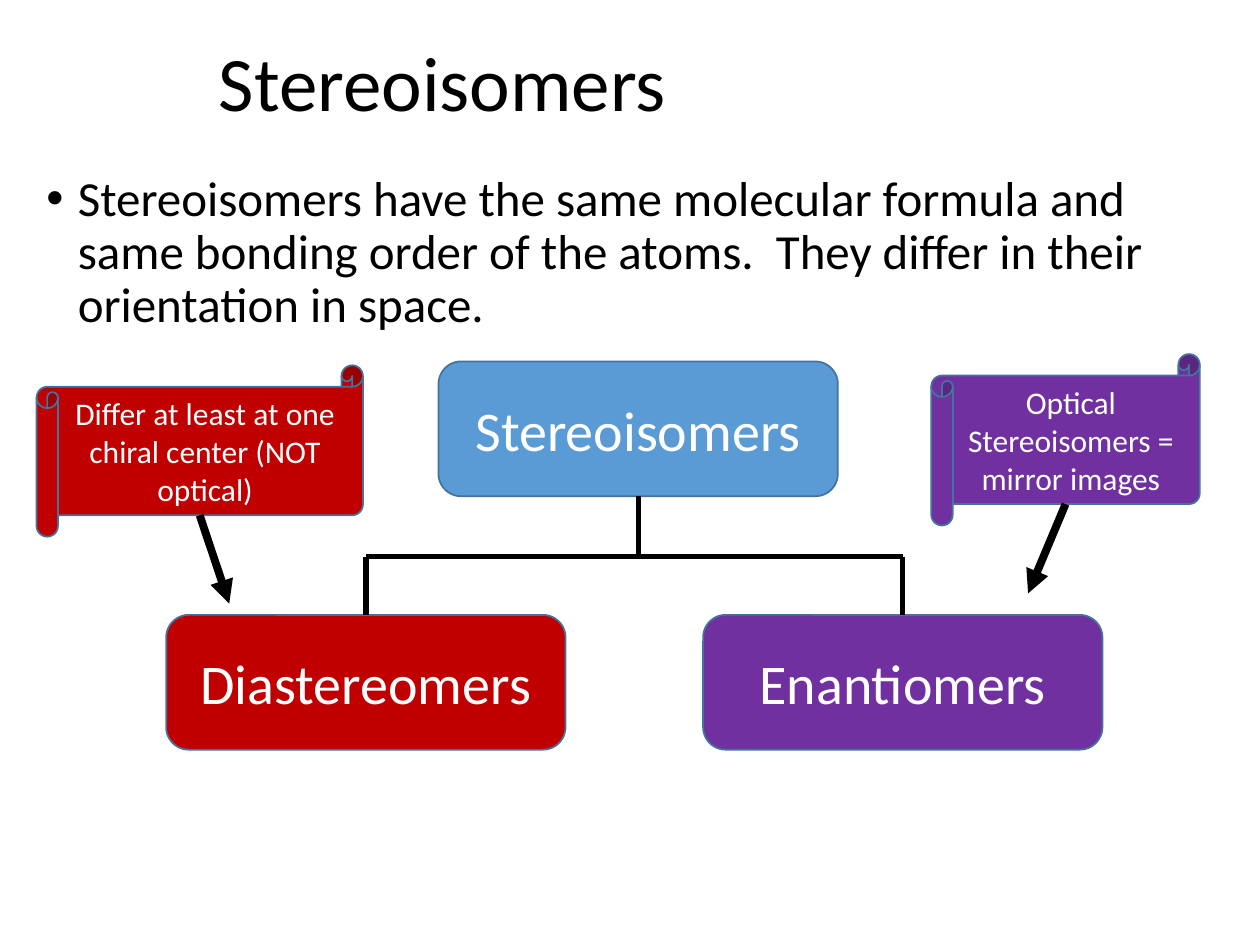
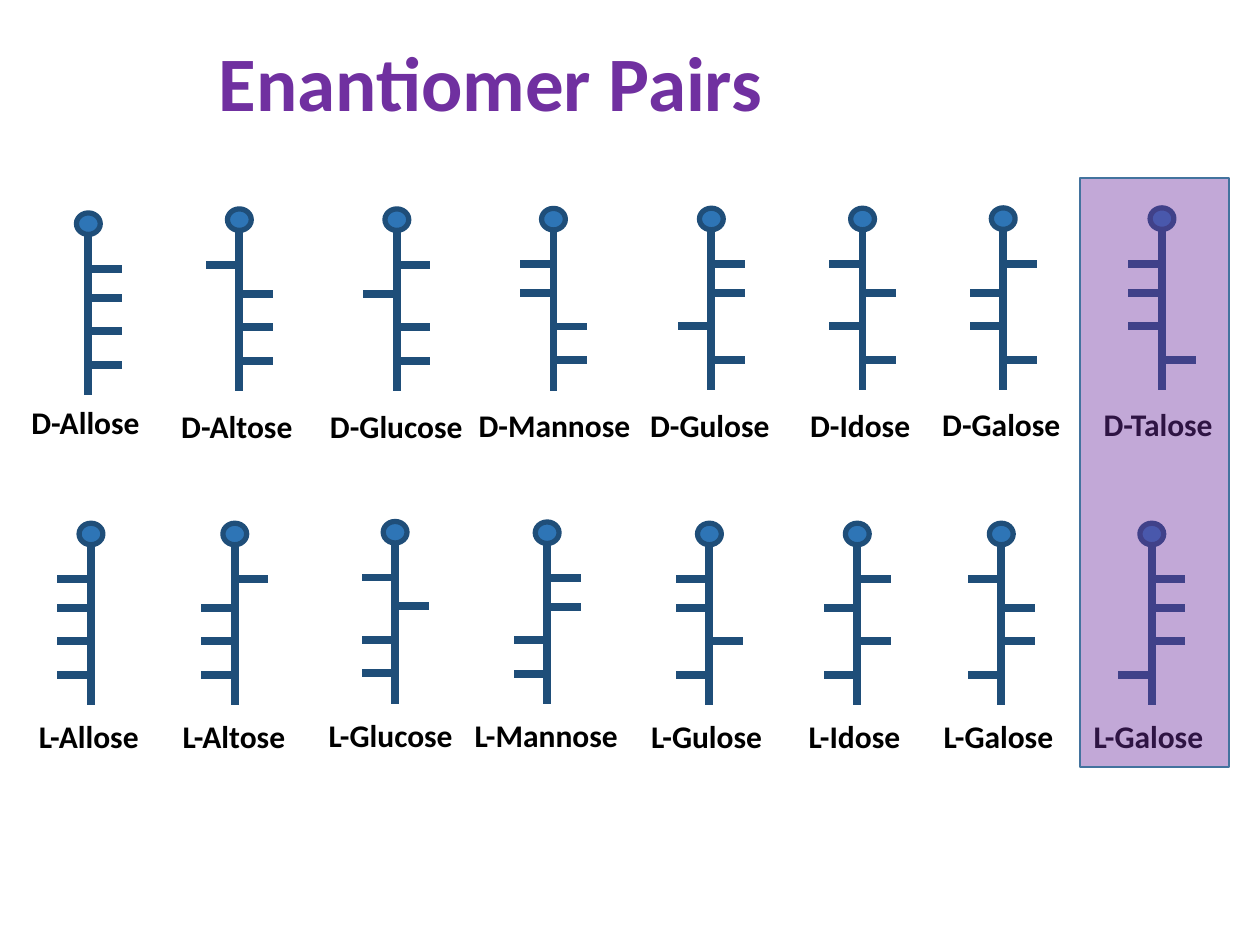
"""Builds two slides on stereoisomers and the enantiomer pairs of the aldohexoses."""
from lxml import etree
from pptx import Presentation
from pptx.dml.color import RGBColor
from pptx.enum.shapes import MSO_CONNECTOR, MSO_SHAPE
from pptx.enum.text import MSO_ANCHOR, PP_ALIGN
from pptx.oxml.ns import qn
from pptx.util import Pt

STRAIGHT = MSO_CONNECTOR.STRAIGHT
ROUNDED, SCROLL = MSO_SHAPE.ROUNDED_RECTANGLE, MSO_SHAPE.HORIZONTAL_SCROLL
OVAL, RECTANGLE = MSO_SHAPE.OVAL, MSO_SHAPE.RECTANGLE
TOP, MIDDLE = MSO_ANCHOR.TOP, MSO_ANCHOR.MIDDLE
LEFT, CENTER = PP_ALIGN.LEFT, PP_ALIGN.CENTER
TOP_SIDE, BOTTOM_SIDE = 0, 2

FONT = "Calibri"
COLORS = {
    "black": "000000", "white": "FFFFFF", "blue": "5B9BD5", "red": "C00000",
    "purple": "7030A0", "outline": "43739E", "head": "2E75B6", "stem": "1F4E79",
}

TITLE_AREA = (118, 18.7, 568, 61.2)
DEFINITION_AREA = (19.4, 95.8, 666, 106.6)
DEFINITION = ("Stereoisomers have the same molecular formula and same bonding order "
              "of the atoms.  They differ in their orientation in space.")

NODE_SIZE = (228.2, 77)
ROOT = ("Stereoisomers", "blue", 250.6, 206.6)
KINDS = [("Diastereomers", "red", 95, 351.4), ("Enantiomers", "purple", 401.8, 351.4)]
BRANCH_Y = 318.2
SCROLLS = [
    ("Optical Stereoisomers = mirror images", "purple", (532.2, 202.4, 153.4, 97.9), (587.5, 339.1)),
    ("Differ at least at one chiral center (NOT optical)", "red", (20.9, 208.8, 186.5, 97.9), (131, 344.9)),
]

# name, stem x, head top, label left, label top, label width, side of each branch
SUGARS = [
    ("D-Allose", 50.5, 121.7, 10.8, 226.8, 77, "RRRR"),
    ("D-Altose", 136.8, 119.4, 96.5, 228.8, 79.2, "LRRR"),
    ("D-Glucose", 226.8, 119.4, 181.5, 228.8, 90.7, "RLRR"),
    ("D-Mannose", 316.3, 119.1, 266.4, 228.5, 102.2, "LLRR"),
    ("D-Gulose", 406.5, 119, 364.4, 228.4, 83.5, "RRLR"),
    ("D-Idose", 492.9, 119, 455.8, 228.4, 72, "LRLR"),
    ("D-Galose", 573.3, 118.8, 531.3, 228.2, 82.8, "RLLR"),
    ("D-Talose", 664, 118.8, 623.5, 228.2, 78.5, "LLLR"),
    ("L-Allose", 52, 299, 15.1, 406.2, 73.4, "LLLL"),
    ("L-Altose", 134.2, 299, 97.2, 406.2, 75.6, "RLLL"),
    ("L-Glucose", 225.8, 298, 180.7, 405.4, 87.1, "LRLL"),
    ("L-Mannose", 312.7, 298.3, 264.2, 405.6, 97.9, "RRLL"),
    ("L-Gulose", 405.4, 299, 365, 406.2, 79.2, "LLRL"),
    ("L-Idose", 489.9, 299, 455, 406.2, 68.4, "RLRL"),
    ("L-Galose", 572.2, 299, 532.1, 406.2, 78.5, "LRRL"),
    ("L-Galose", 658.2, 299, 617.8, 406.2, 78.5, "RRRL"),
]
HEAD_WIDTH, HEAD_HEIGHT = 13.6, 12.3
STEM_LENGTH, BRANCH_LENGTH = 91.8, 19.2
BRANCH_DROPS = (32, 48.4, 67.5, 86.7)
LABEL_HEIGHT = 28.8
HIGHLIGHT = (617, 101.7, 85.5, 336.7)


def color(name):
    return RGBColor.from_string(COLORS[name])


def write(shape, text, size, ink="black", bold=False, align=LEFT, anchor=MIDDLE, wrap=True):
    frame = shape.text_frame
    frame.text = text
    frame.word_wrap = wrap
    frame.vertical_anchor = anchor
    para = frame.paragraphs[0]
    para.alignment = align
    for span in para.runs:
        span.font.name, span.font.size, span.font.bold = FONT, Pt(size), bold
        span.font.color.rgb = color(ink)
    return para


def add_text(page, area, text, size, **style):
    box = page.shapes.add_textbox(*map(Pt, area))
    return write(box, text, size, **style)


def add_block(shapes, kind, area, fill, outline="outline", weight=1):
    block = shapes.add_shape(kind, *map(Pt, area))
    block.shadow.inherit = False
    block.fill.solid()
    block.fill.fore_color.rgb = color(fill)
    block.line.color.rgb = color(outline)
    block.line.width = Pt(weight)
    return block


def add_line(shapes, start, end, weight, ink="black", arrow=False):
    line = shapes.add_connector(STRAIGHT, *map(Pt, start + end))
    line.line.color.rgb = color(ink)
    line.line.width = Pt(weight)
    if arrow:
        etree.SubElement(line.line._get_or_add_ln(), qn("a:tailEnd"), type="triangle")
    etree.SubElement(line._element.spPr, qn("a:effectLst"))
    return line


def add_page(deck, title, ink="black", bold=False):
    page = deck.slides.add_slide(deck.slide_layouts[6])
    add_text(page, TITLE_AREA, title, 44, ink=ink, bold=bold).line_spacing = 0.9
    return page


def add_node(page, text, fill, left, top):
    node = add_block(page.shapes, ROUNDED, (left, top) + NODE_SIZE, fill)
    write(node, text, 32, ink="white", align=CENTER)
    return node, left + NODE_SIZE[0] / 2


def add_tree(page):
    root, root_x = add_node(page, *ROOT)
    trunk = add_line(page.shapes, (root_x, ROOT[3] + NODE_SIZE[1]), (root_x, BRANCH_Y), 3)
    trunk.begin_connect(root, BOTTOM_SIDE)
    centers = []
    for kind in KINDS:
        node, center = add_node(page, *kind)
        drop = add_line(page.shapes, (center, BRANCH_Y), (center, kind[3]), 3)
        drop.end_connect(node, TOP_SIDE)
        centers.append(center)
    add_line(page.shapes, (centers[0], BRANCH_Y), (centers[-1], BRANCH_Y), 3)


def add_scroll(page, text, fill, area, target):
    scroll = add_block(page.shapes, SCROLL, area, fill)
    write(scroll, text, 18, ink="white", align=CENTER)
    left, top, width, height = area
    start = (left + width / 2, top + height * 7 / 8)
    add_line(page.shapes, start, target, 4.5, arrow=True)


def add_definition(page):
    para = add_text(page, DEFINITION_AREA, DEFINITION, 28, anchor=TOP)
    para.line_spacing = 0.9
    properties = para._p.get_or_add_pPr()
    properties.set("marL", str(Pt(18)))
    properties.set("indent", str(-Pt(18)))
    etree.SubElement(properties, qn("a:buFont"), typeface="Arial")
    etree.SubElement(properties, qn("a:buChar"), char="•")


def add_sugar(page, name, stem_x, head_top, label_left, label_top, label_width, sides):
    shapes = page.shapes.add_group_shape().shapes
    head = (stem_x - HEAD_WIDTH / 2, head_top, HEAD_WIDTH, HEAD_HEIGHT)
    add_block(shapes, OVAL, head, "head", "stem", 3)
    stem_top = head_top + HEAD_HEIGHT
    add_line(shapes, (stem_x, stem_top), (stem_x, stem_top + STEM_LENGTH), 4.5, "stem")
    for side, drop in zip(sides, BRANCH_DROPS):
        tip = stem_x + (BRANCH_LENGTH if side == "R" else -BRANCH_LENGTH)
        add_line(shapes, (stem_x, head_top + drop), (tip, head_top + drop), 4.5, "stem")
    label = (label_left, label_top, label_width, LABEL_HEIGHT)
    add_text(page, label, name, 18, bold=True, anchor=TOP, wrap=False)


def add_highlight(page):
    veil = add_block(page.shapes, RECTANGLE, HIGHLIGHT, "purple")
    tint = veil._element.spPr.find(qn("a:solidFill"))[0]
    etree.SubElement(tint, qn("a:alpha"), val="42000")


def main():
    deck = Presentation()
    deck.slide_width, deck.slide_height = Pt(720), Pt(540)

    overview = add_page(deck, "Stereoisomers")
    add_definition(overview)
    add_tree(overview)
    for scroll in SCROLLS:
        add_scroll(overview, *scroll)

    pairs = add_page(deck, "Enantiomer Pairs", ink="purple", bold=True)
    for sugar in SUGARS:
        add_sugar(pairs, *sugar)
    add_highlight(pairs)

    deck.save("out.pptx")


if __name__ == "__main__":
    main()
